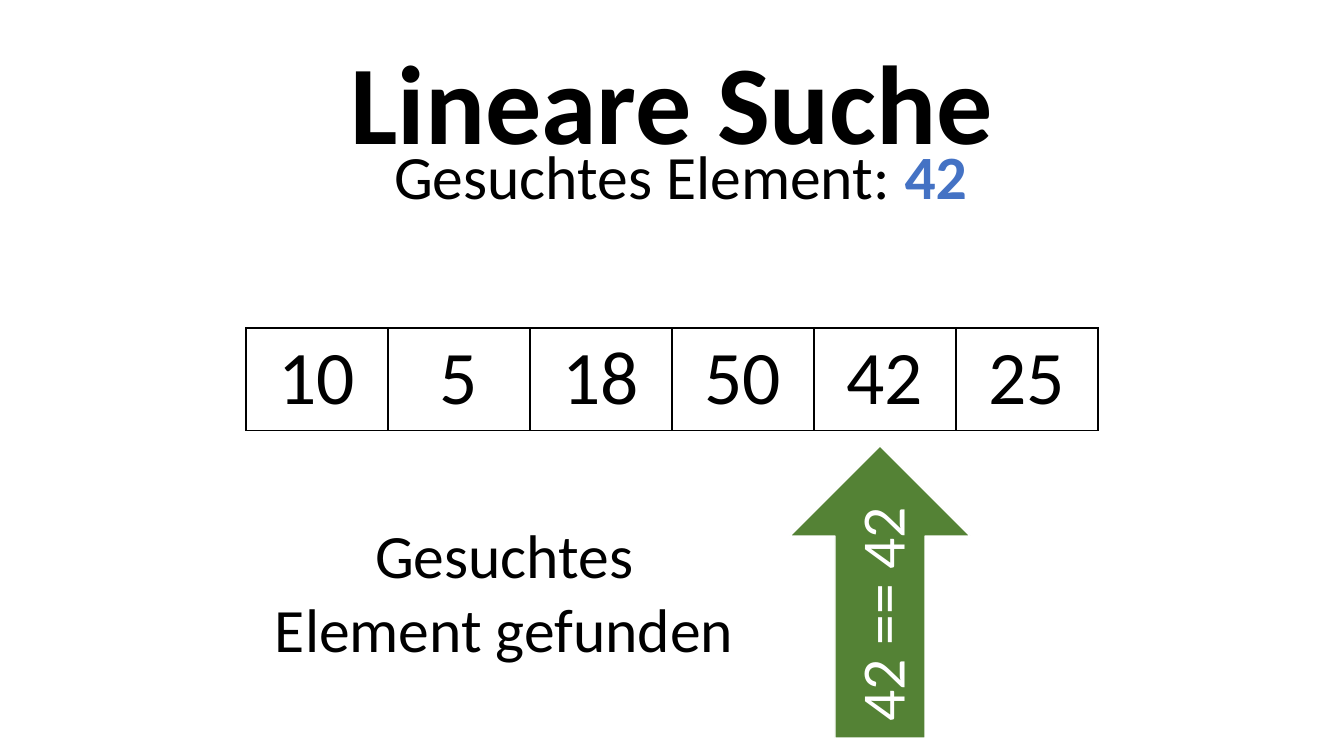
from lxml import etree
from pptx import Presentation, util as u
from pptx.dml.color import RGBColor
from pptx.enum import shapes, text
from pptx.oxml.ns import qn

COLORS = {"ink": "000000", "paper": "FFFFFF", "target": "4472C4", "found": "548235"}
NUMBERS = [10, 5, 18, 50, 42, 25]
CELL_WIDTH, CELL_HEIGHT = 142, 102


def px(*lengths):
    """Turn pixels at 100.8 to the inch into EMU."""
    return [u.Inches(length / 100.8) for length in lengths]


def write(frame, size, *runs, **paragraph_format):
    """Fill a text frame with one centred paragraph of (words, colour, bold) runs."""
    frame.word_wrap = True
    paragraph = frame.paragraphs[0]
    for name, value in {"alignment": text.PP_ALIGN.CENTER, **paragraph_format}.items():
        setattr(paragraph, name, value)
    for words, color, bold in runs:
        run = paragraph.add_run()
        run.text = words
        for name, value in {"name": "Calibri", "size": u.Pt(size), "bold": bold}.items():
            setattr(run.font, name, value)
        run.font.color.rgb = RGBColor.from_string(COLORS[color])


deck = Presentation()
deck.slide_width, deck.slide_height = u.Inches(13.333), u.Inches(7.5)
slide = deck.slides.add_slide(deck.slide_layouts[5])

# Heading
title = slide.shapes.title
title.left, title.top, title.width, title.height = px(93, 40, 1159, 136)
title.text_frame.auto_size = text.MSO_AUTO_SIZE.NONE
title.text_frame.vertical_anchor = text.MSO_ANCHOR.MIDDLE
write(title.text_frame, 80, ("Lineare Suche", "ink", True), line_spacing=0.9)

# Array being searched
array = slide.shapes.add_table(
    1, len(NUMBERS), *px(246, 328, CELL_WIDTH * len(NUMBERS), CELL_HEIGHT)
).table
array.first_row = array.horz_banding = False
for column, number in enumerate(NUMBERS):
    cell = array.cell(0, column)
    write(cell.text_frame, 54, (str(number), "ink", False))
    cell_format = cell._tc.get_or_add_tcPr()
    for side in ("a:lnL", "a:lnR", "a:lnT", "a:lnB"):
        border = etree.SubElement(cell_format, qn(side), w=str(u.Pt(1)))
        fill = etree.SubElement(border, qn("a:solidFill"))
        etree.SubElement(fill, qn("a:srgbClr"), val=COLORS["ink"])
    cell.fill.background()

# Target and outcome
captions = [
    ((373, 133, 615, 85), [("Gesuchtes Element: ", "ink", False), ("42", "target", True)]),
    ((259, 512, 491, 159), [("Gesuchtes Element gefunden", "ink", False)]),
]
for box, runs in captions:
    caption = slide.shapes.add_textbox(*px(*box))
    write(caption.text_frame, 44, *runs)
    caption.text_frame.auto_size = text.MSO_AUTO_SIZE.SHAPE_TO_FIT_TEXT

# Arrow pointing up at the match
match = slide.shapes.add_shape(shapes.MSO_SHAPE.RIGHT_ARROW, *px(734, 502, 292, 180))
match.rotation = 270
match.shadow.inherit = False
match.fill.solid()
match.fill.fore_color.rgb = RGBColor.from_string(COLORS["found"])
match.line.color.rgb = RGBColor.from_string(COLORS["paper"])
match.line.width = u.Pt(1)
match.text_frame.vertical_anchor = text.MSO_ANCHOR.MIDDLE
write(match.text_frame, 44, ("42 == 42", "paper", False))

deck.save("out.pptx")
